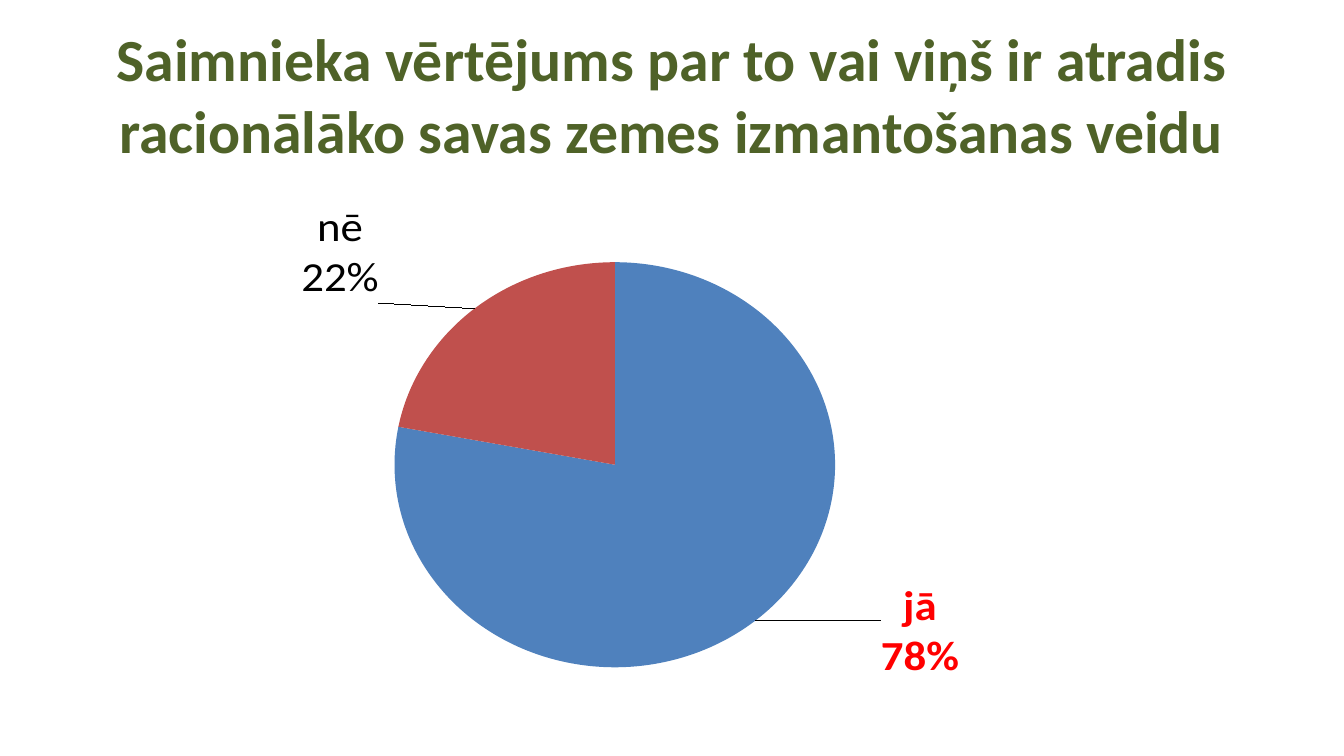
"""Build a slide with a pie chart of landowners' answers on rational land use."""
from lxml import etree
from pptx import Presentation
from pptx.chart.data import CategoryChartData
from pptx.dml.color import RGBColor
from pptx.enum.chart import XL_CHART_TYPE, XL_LABEL_POSITION
from pptx.enum.text import MSO_ANCHOR, PP_ALIGN
from pptx.oxml import parse_xml
from pptx.oxml.ns import qn
from pptx.util import Cm, Pt

PIE = XL_CHART_TYPE.PIE
OUTSIDE_END = XL_LABEL_POSITION.OUTSIDE_END
MIDDLE = MSO_ANCHOR.MIDDLE
CENTER = PP_ALIGN.CENTER
CHART_NAMESPACE = "http://schemas.openxmlformats.org/drawingml/2006/chart"


def format_font(font, size, color, bold):
    values = {"name": "Calibri", "size": Pt(size), "bold": bold}
    for name, value in values.items():
        setattr(font, name, value)
    font.color.rgb = RGBColor.from_string(color)


def manual_layout(**values):
    items = "".join(f'<c:{name} val="{value}"/>' for name, value in values.items())
    return parse_xml(
        f'<c:layout xmlns:c="{CHART_NAMESPACE}">'
        f"<c:manualLayout>{items}</c:manualLayout></c:layout>"
    )


presentation = Presentation()
presentation.slide_width = Cm(25.4)
presentation.slide_height = Cm(14.29)
slide = presentation.slides.add_slide(presentation.slide_layouts[5])

title = slide.shapes.title
title_box = {"left": Cm(1.27), "top": Cm(0.58), "width": Cm(22.86), "height": Cm(2.39)}
for name, value in title_box.items():
    setattr(title, name, value)
title.text_frame.vertical_anchor = MIDDLE
paragraph = title.text_frame.paragraphs[0]
paragraph.alignment = CENTER
run = paragraph.add_run()
run.text = "Saimnieka vērtējums par to vai viņš ir atradis racionālāko savas zemes izmantošanas veidu"
format_font(run.font, 32, "4F6228", True)

answers = [
    ("jā", 78, "4F81BD", "FF0000", True, 0.12, -0.06),
    ("nē", 22, "C0504D", "000000", False, -0.09, 0),
]
chart_data = CategoryChartData()
chart_data.categories = [answer[0] for answer in answers]
chart_data.add_series("Series 1", [answer[1] for answer in answers])
chart = slide.shapes.add_chart(
    PIE, Cm(2.69), Cm(3.33), Cm(19), Cm(10.41), chart_data
).chart
chart.has_legend = False
chart.has_title = False
format_font(chart.font, 24, "000000", False)

plot = chart.plots[0]
plot.vary_by_categories = True
plot_area = chart.element.chart.plotArea
for old_layout in plot_area.findall(qn("c:layout")):
    plot_area.remove(old_layout)
plot_area.insert(0, manual_layout(
    layoutTarget="inner", xMode="edge", yMode="edge", x=0.24, y=0.17, w=0.46, h=0.8
))

series = plot.series[0]
labels = series.data_labels
label_values = {"show_percentage": True, "show_category_name": True, "show_value": False}
for name, value in label_values.items():
    setattr(labels, name, value)

for index, (_, _, fill_color, text_color, bold, shift_x, shift_y) in enumerate(answers):
    point = series.points[index]
    point.format.fill.solid()
    point.format.fill.fore_color.rgb = RGBColor.from_string(fill_color)
    label = point.data_label
    format_font(label.font, 24, text_color, bold)
    label.position = OUTSIDE_END

for label_element, answer in zip(series.data_labels._element.findall(qn("c:dLbl")), answers):
    label_element.insert(1, manual_layout(x=answer[5], y=answer[6]))
    for tag, value in (("c:showVal", "0"), ("c:showCatName", "1"), ("c:showPercent", "1")):
        label_element.find(qn(tag)).set("val", value)
    etree.SubElement(label_element, qn("c:separator")).text = "\n"

presentation.save("out.pptx")
